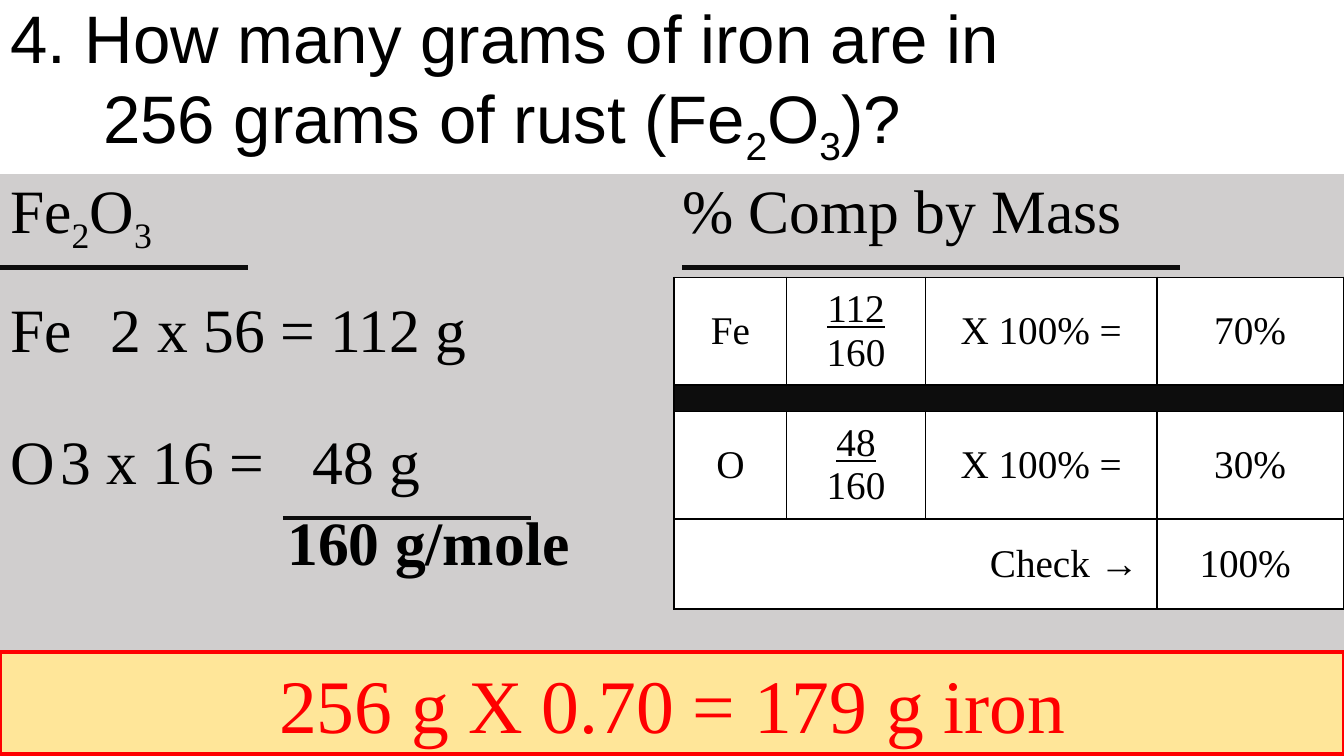
from lxml.etree import SubElement
from pptx import Presentation
from pptx.dml.color import RGBColor
from pptx.enum.shapes import MSO_CONNECTOR as Link, MSO_SHAPE as Form
from pptx.enum.text import MSO_ANCHOR as Anchor, MSO_AUTO_SIZE as Fit, PP_ALIGN as Align
from pptx.oxml.ns import qn
from pptx.util import Pt

BLACK = RGBColor(0x00, 0x00, 0x00)
WHITE = RGBColor(0xFF, 0xFF, 0xFF)
INK = RGBColor(0x0D, 0x0D, 0x0D)
GREY = RGBColor(0xD0, 0xCE, 0xCE)
GOLD = RGBColor(0xFF, 0xE6, 0x99)
RED = RGBColor(0xFF, 0x00, 0x00)
SANS, SERIF = "Arial", "Times New Roman"
WIDE, HIGH = 960, 540
SUB = {"sub": True}
RUST = [("Fe", {}), ("2", SUB), ("O", {}), ("3", SUB)]


class Deck:
    def __init__(self):
        self.show = Presentation()
        self.show.slide_width, self.show.slide_height = Pt(WIDE), Pt(HIGH)
        self.slide = self.show.slides.add_slide(self.show.slide_layouts[5])
        self.font, self.size, self.color = SERIF, 44, BLACK

    def style(self, font, size, color=BLACK):
        self.font, self.size, self.color = font, size, color

    def run(self, para, text, bold=False, under=False, sub=False):
        run = para.add_run()
        run.text = text
        font = run.font
        font.name, font.size = self.font, Pt(self.size)
        font.bold, font.underline = bold, under
        font.color.rgb = self.color
        if sub:
            font._element.set("baseline", "-25000")

    def fill(self, para, runs, align=Align.LEFT, before=0, left=0, hang=0, tabs=()):
        para.alignment = align
        para.line_spacing, para.space_before = 1.0, Pt(before)
        props = para._p.get_or_add_pPr()
        props.set("marL", str(Pt(left)))
        props.set("indent", str(Pt(-hang)))
        if tabs:
            stops = SubElement(props, qn("a:tabLst"))
            for pos in tabs:
                SubElement(stops, qn("a:tab"), pos=str(Pt(pos)), algn="l")
        for text, look in runs:
            if text == "\n":
                para.add_line_break()
            else:
                self.run(para, text, **look)

    def title(self, box, runs, hang):
        shape = self.slide.shapes.title
        shape.left, shape.top, shape.width, shape.height = map(Pt, box)
        frame = shape.text_frame
        frame.auto_size, frame.word_wrap = Fit.NONE, True
        frame.vertical_anchor = Anchor.BOTTOM
        self.fill(frame.paragraphs[0], runs, left=hang, hang=hang)

    def table(self, left, top, cols, rows):
        shape = self.slide.shapes.add_table(
            len(rows), len(cols), Pt(left), Pt(top), Pt(sum(cols)), Pt(sum(rows)))
        table = shape.table
        table.first_row = table.horz_banding = False
        for col, width in zip(table.columns, cols):
            col.width = Pt(width)
        for row, height in zip(table.rows, rows):
            row.height = Pt(height)
        return table

    def cell(self, cell, back, edge=None):
        cell.fill.solid()
        cell.fill.fore_color.rgb = back
        props = cell._tc.get_or_add_tcPr()
        for spot, side in enumerate(("lnL", "lnR", "lnT", "lnB")):
            line = SubElement(props, qn("a:" + side), w=str(Pt(1)))
            if edge is None:
                SubElement(line, qn("a:noFill"))
            else:
                solid = SubElement(line, qn("a:solidFill"))
                SubElement(solid, qn("a:srgbClr"), val=str(edge))
            props.insert(spot, line)

    def rule(self, left, top, width):
        line = self.slide.shapes.add_connector(
            Link.STRAIGHT, Pt(left), Pt(top), Pt(left + width), Pt(top))
        line.line.color.rgb, line.line.width = INK, Pt(3)
        SubElement(line._element.spPr, qn("a:effectLst"))

    def banner(self, box, runs):
        shape = self.slide.shapes.add_shape(Form.RECTANGLE, *map(Pt, box))
        shape.shadow.inherit = False
        shape.fill.solid()
        shape.fill.fore_color.rgb = GOLD
        shape.line.color.rgb, shape.line.width = RED, Pt(3)
        frame = shape.text_frame
        frame.word_wrap, frame.vertical_anchor = True, Anchor.BOTTOM
        self.fill(frame.paragraphs[0], runs, Align.CENTER)


def work(deck):
    deck.style(SERIF, 44)
    grid = deck.table(0, 124, [WIDE / 2] * 2, [343])
    mass, comp = grid.cell(0, 0), grid.cell(0, 1)
    for cell in (mass, comp):
        deck.cell(cell, GREY)
    deck.fill(comp.text_frame.paragraphs[0], [("% Comp by Mass", {})])
    frame = mass.text_frame
    deck.fill(frame.paragraphs[0], RUST)
    steps = [
        ([("Fe\t2 x 56 = 112 g", {})], {"before": 29, "tabs": [66]}),
        ([("O\t3 x 16 =\t48 g", {})], {"before": 46, "tabs": [65, 232]}),
        ([("160 g/mole", {"bold": True})], {"before": 9, "left": 198}),
    ]
    for runs, look in steps:
        deck.fill(frame.add_paragraph(), runs, **look)


def shares(deck):
    deck.style(SERIF, 28)
    grid = deck.table(481.5, 198, [80.5, 99, 165.5, 133], [77, 18.7, 77, 64.3])
    parts = [(0, "Fe", "112", "70%"), (2, "O", "48", "30%")]
    texts = {}
    for row, atom, part, share in parts:
        ratio = [(part, {"under": True}), ("\n", {}), ("160", {})]
        items = [[(atom, {})], ratio, [("X 100% =", {})], [(share, {})]]
        for col, runs in enumerate(items):
            texts[row, col] = runs
    texts[3, 0] = [("Check →", {})]
    texts[3, 3] = [("100% ", {})]
    grid.cell(1, 0).merge(grid.cell(1, 3))
    grid.cell(3, 0).merge(grid.cell(3, 2))
    for row in range(4):
        for col in range(4):
            cell = grid.cell(row, col)
            deck.cell(cell, INK if row == 1 else WHITE, BLACK)
            cell.vertical_anchor = Anchor.MIDDLE
            para = cell.text_frame.paragraphs[0]
            if (row, col) in texts:
                check = (row, col) == (3, 0)
                align = Align.RIGHT if check else Align.CENTER
                deck.fill(para, texts[row, col], align)
            elif row == 1:
                cell.margin_top = cell.margin_bottom = 0
                SubElement(para._p, qn("a:endParaRPr"), sz="800")
    grid.cell(3, 0).margin_right = Pt(13)


def main():
    deck = Deck()
    deck.style(SANS, 48)
    ask = [("4. How many grams of iron are in ", {}), ("\n", {}),
           ("256 grams of rust (", {}), *RUST, (")?", {})]
    deck.title((0, 0, WIDE, 124), ask, 66.5)
    work(deck)
    deck.rule(0, 191, 177)
    deck.rule(202, 370, 177)
    shares(deck)
    deck.style(SERIF, 54, RED)
    deck.banner((0, 466, WIDE, 72.5), [("256 g X 0.70 = 179 g iron", {})])
    deck.rule(487.5, 191, 355.5)
    deck.show.save("out.pptx")


if __name__ == "__main__":
    main()
